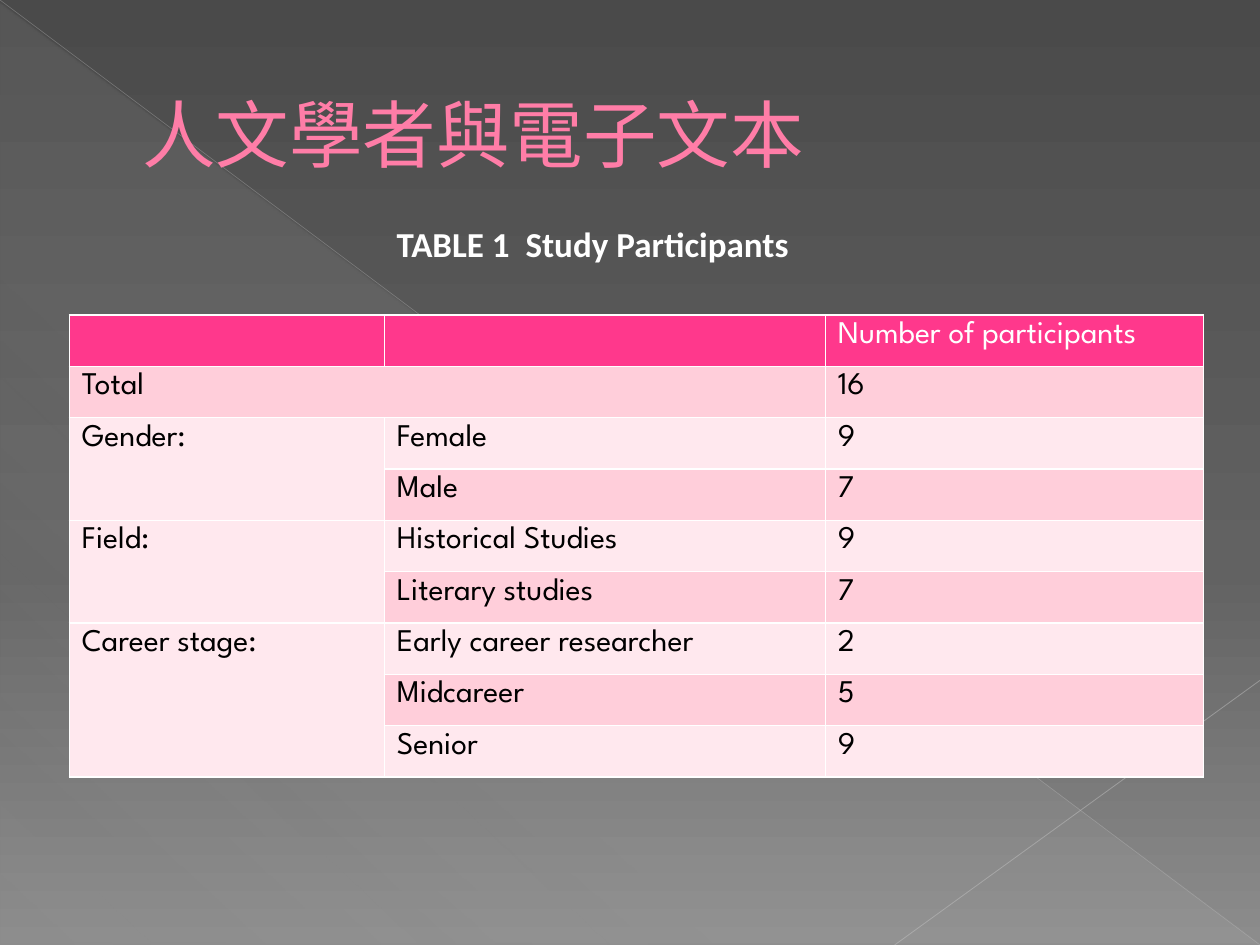
from lxml.etree import SubElement as Sub
from pptx import Presentation
from pptx.dml.color import RGBColor as Rgb
from pptx.enum.shapes import MSO_CONNECTOR as Conn, MSO_SHAPE as Shape
from pptx.enum.text import MSO_ANCHOR as Anchor, MSO_AUTO_SIZE as Auto
from pptx.oxml.ns import qn
from pptx.util import Inches, Pt

WIDE, HIGH = 10, 7.5
INK = {
    "white": "FFFFFF", "black": "000000", "title": "FF7DA7", "edge": "B12761",
    "head": "FF388C", "dark": "FFCEDA", "pale": "FFE8EE",
    "sheen": "D2D2D2", "long": "BFBFBF", "short": "C6C6C6",
    "top": "4A4A4A", "mid": "626262", "base": "8C8C8C",
}
FACE = "League Spartan"
COLS = (2.5, 3.5, 3)
HEAD = ("", "", "Number of participants")
GROUPS = (
    ("Gender:", (("Female", 9), ("Male", 7))),
    ("Field:", (("Historical Studies", 9), ("Literary studies", 7))),
    ("Career stage:", (("Early career researcher", 2), ("Midcareer", 5), ("Senior", 9))),
)


def inch(*nums):
    return [Inches(n) for n in nums]


def set_font(font, size, ink, name=FACE, bold=False):
    font.size, font.name, font.bold = Pt(size), name, bold
    font.color.rgb = Rgb.from_string(INK[ink])


def add_ink(node, ink, alpha=100):
    color = Sub(node, qn("a:srgbClr"), val=INK[ink])
    if alpha < 100:
        Sub(color, qn("a:alpha"), val=str(alpha * 1000))


def add_line(node, ink):
    Sub(Sub(node, qn("a:solidFill")), qn("a:srgbClr"), val=INK[ink])


def set_grad(fill, root, angle, stops):
    """Turn the first solid fill under root into a gradient of (place, ink, alpha) stops."""
    fill.solid()
    node = root.find(".//" + qn("a:solidFill"))
    node.tag = qn("a:gradFill")
    for child in list(node):
        node.remove(child)
    row = Sub(node, qn("a:gsLst"))
    for place, ink, alpha in stops:
        add_ink(Sub(row, qn("a:gs"), pos=str(place * 1000)), ink, alpha)
    Sub(node, qn("a:lin"), ang=str(angle * 60000), scaled="0")


def add_ray(slide, ends, ink, width, alpha):
    ray = slide.shapes.add_connector(Conn.STRAIGHT, *inch(*ends))
    ray.line.width = Pt(width)
    ray.line.color.rgb = Rgb.from_string(INK[ink])
    color = ray.element.find(".//" + qn("a:srgbClr"))
    Sub(color, qn("a:alpha"), val=str(alpha * 1000))
    Sub(ray.element.spPr, qn("a:effectLst"))


def draw_back(slide, wide, high):
    set_grad(slide.background.fill, slide.element, 90,
             ((0, "top", 100), (60, "mid", 100), (100, "base", 100)))
    sheen = slide.shapes.add_shape(Shape.RIGHT_TRIANGLE, *inch(0, 0.02, wide, high - 0.02))
    sheen.shadow.inherit = False
    sheen.line.fill.background()
    set_grad(sheen.fill, sheen.element, 133,
             ((0, "sheen", 10), (70, "sheen", 8), (100, "sheen", 1)))
    add_ray(slide, (0, 0, wide, high), "long", 0.39, 35)
    add_ray(slide, (wide, high * 0.72, wide * 0.71, high), "short", 0.47, 45)


def draw_title(slide, box):
    title = slide.shapes.title
    slide.shapes.element.append(title.element)  # in front of the backdrop
    title.left, title.top, title.width, title.height = inch(*box)
    frame = title.text_frame
    frame.text = "人文學者與電子文本"
    frame.vertical_anchor = Anchor.MIDDLE
    para = frame.paragraphs[0]
    set_font(para.font, 42, "title")
    props = para._p.get_or_add_pPr()
    props.set("marL", str(Inches(0.53)))
    props.set("indent", "0")
    props.set("algn", "l")
    edge = Sub(para.runs[0].font._element, qn("a:ln"), w=str(Pt(0.5)))
    add_line(edge, "edge")


def draw_label(slide, box):
    frame = slide.shapes.add_textbox(*inch(*box)).text_frame
    frame.word_wrap = False
    frame.auto_size = Auto.SHAPE_TO_FIT_TEXT
    frame.text = "TABLE 1  Study Participants"
    set_font(frame.paragraphs[0].font, 20, "white", "Calibri", True)


def set_cell(cell, text, fill, ink):
    cell.text = text
    set_font(cell.text_frame.paragraphs[0].font, 18, ink)
    props = cell._tc.get_or_add_tcPr()
    for side in ("lnL", "lnR", "lnT", "lnB"):
        add_line(Sub(props, qn("a:" + side), w=str(Pt(1))), "white")
    cell.fill.solid()
    cell.fill.fore_color.rgb = Rgb.from_string(INK[fill])


def draw_table(slide, box):
    rows, spans = [HEAD, ("Total", "", "16")], [(1, 0, 1, 1)]
    for name, parts in GROUPS:
        first = len(rows)
        for i, (part, count) in enumerate(parts):
            rows.append(("" if i else name, part, str(count)))
        spans.append((first, 0, len(rows) - 1, 0))

    table = slide.shapes.add_table(len(rows), len(COLS), *inch(*box)).table
    for col, width in zip(table.columns, COLS):
        col.width = Inches(width)
    for r, texts in enumerate(rows):
        band = "dark" if r % 2 else "pale"
        for c, text in enumerate(texts):
            fill = "head" if r == 0 else "pale" if c == 0 and r > 1 else band
            set_cell(table.cell(r, c), text, fill, "black" if r else "white")
    for top, left, base, right in spans:
        table.cell(top, left).merge(table.cell(base, right))


def main():
    deck = Presentation()
    deck.slide_width, deck.slide_height = inch(WIDE, HIGH)
    slide = deck.slides.add_slide(deck.slide_layouts[5])
    draw_back(slide, WIDE, HIGH)
    draw_title(slide, (0.5, 0.29, 9, 1.53))
    draw_table(slide, (0.55, 2.5, sum(COLS), 3.67))
    draw_label(slide, (3.05, 1.72, 3.36, 0.44))
    deck.save("out.pptx")


if __name__ == "__main__":
    main()
